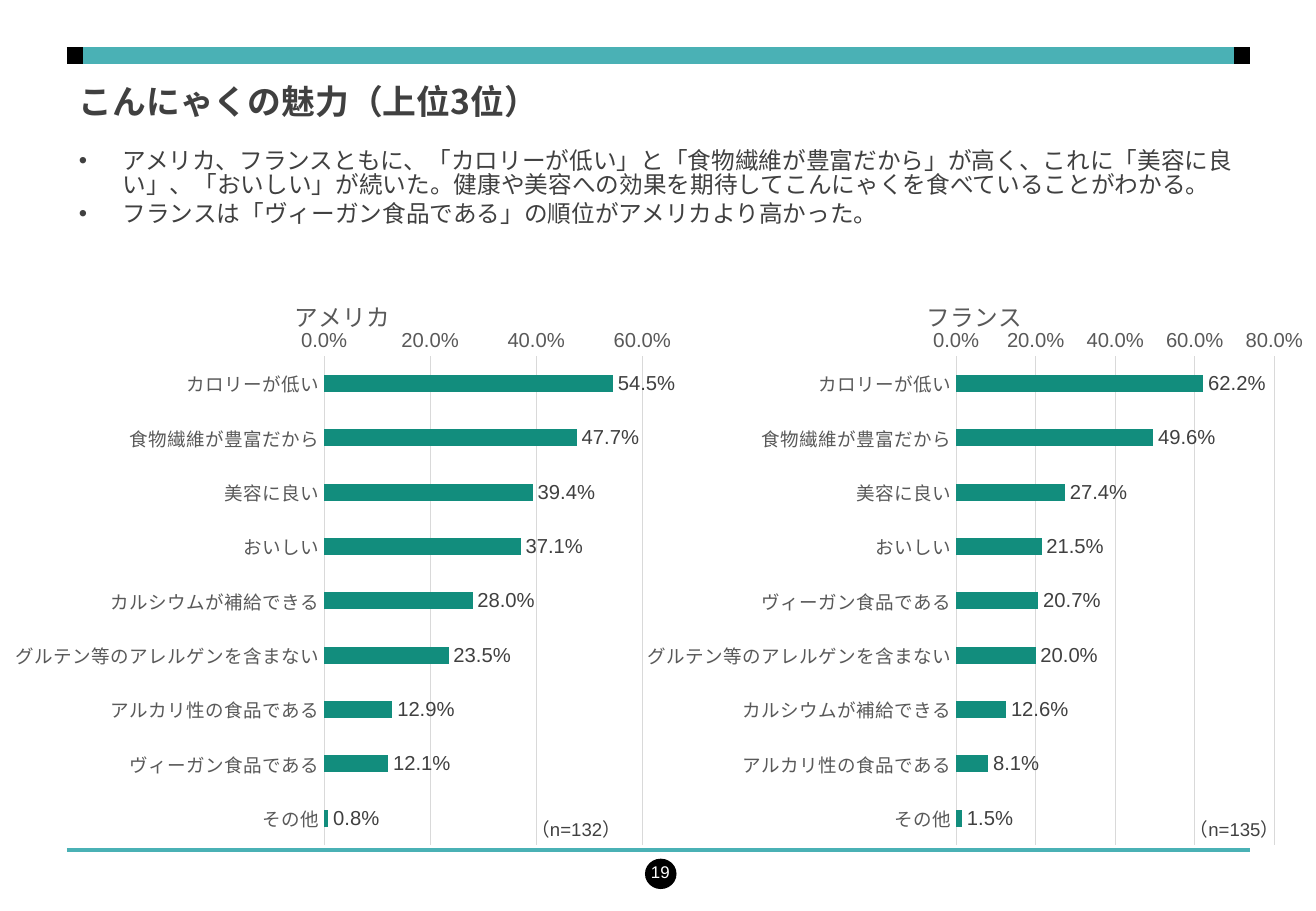
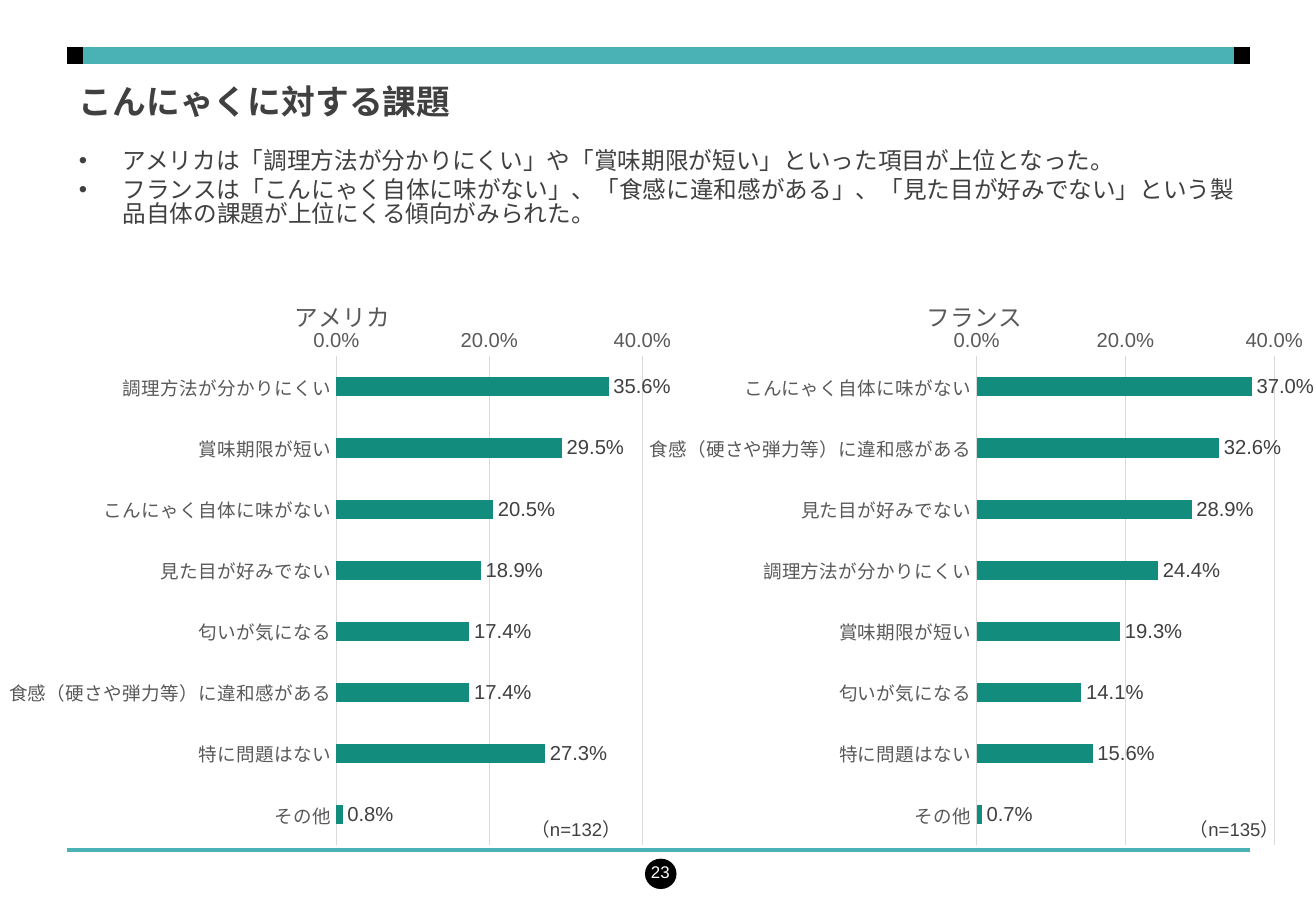
from pptx import Presentation
from pptx.chart.data import CategoryChartData
from pptx.dml.color import RGBColor
from pptx.enum.chart import XL_CHART_TYPE as ChartType, XL_LABEL_POSITION as LabelPos, XL_TICK_MARK as Tick
from pptx.enum.shapes import MSO_CONNECTOR as Connector, MSO_SHAPE as Shape
from pptx.enum.text import MSO_ANCHOR as Anchor, PP_ALIGN as Align
from pptx.oxml import parse_xml
from pptx.oxml.ns import nsdecls, qn
from pptx.util import Pt

WIDTH, HEIGHT = 780, 540
TEAL, GREEN, BLACK, WHITE = "4AB1B5", "128D7D", "000000", "FFFFFF"
INK, GREY, GRID = "404040", "595959", "D9D9D9"
LATIN, JAPANESE = "Arial", "Noto Sans CJK JP"
PERCENT = '0.0"%"'

LEFT, RIGHT = 39.6, 740.9
BAND_Y, RULE_Y, CAP = 33.1, 504, 9.6
TITLE_BOX = (38.9, 48.2, 702, 31)
BULLET_BOX = (38.9, 85.7, 702, 65.5)
CHART_W, CHART_H, CHART_TOP = 405.4, 357, 157
PLOT_TOP, PLOT_H, PLOT_RIGHT = 0.152, 0.812, 0.939

SLIDES = [
    {
        "number": "19",
        "title": "こんにゃくの魅力（上位3位）",
        "bullets": [
            "アメリカ、フランスともに、「カロリーが低い」と「食物繊維が豊富だから」が高く、これに「美容に良い」、「おいしい」が続いた。健康や美容への効果を期待してこんにゃくを食べていることがわかる。",
            "フランスは「ヴィーガン食品である」の順位がアメリカより高かった。",
        ],
        "usa": (60, 0.474, {
            "カロリーが低い": 54.5, "食物繊維が豊富だから": 47.7, "美容に良い": 39.4,
            "おいしい": 37.1, "カルシウムが補給できる": 28.0,
            "グルテン等のアレルゲンを含まない": 23.5, "アルカリ性の食品である": 12.9,
            "ヴィーガン食品である": 12.1, "その他": 0.8,
        }),
        "france": (80, 0.474, {
            "カロリーが低い": 62.2, "食物繊維が豊富だから": 49.6, "美容に良い": 27.4,
            "おいしい": 21.5, "ヴィーガン食品である": 20.7,
            "グルテン等のアレルゲンを含まない": 20.0, "カルシウムが補給できる": 12.6,
            "アルカリ性の食品である": 8.1, "その他": 1.5,
        }),
    },
    {
        "number": "23",
        "title": "こんにゃくに対する課題",
        "bullets": [
            "アメリカは「調理方法が分かりにくい」や「賞味期限が短い」といった項目が上位となった。",
            "フランスは「こんにゃく自体に味がない」、「食感に違和感がある」、「見た目が好みでない」という製品自体の課題が上位にくる傾向がみられた。",
        ],
        "usa": (40, 0.492, {
            "調理方法が分かりにくい": 35.6, "賞味期限が短い": 29.5,
            "こんにゃく自体に味がない": 20.5, "見た目が好みでない": 18.9,
            "匂いが気になる": 17.4, "食感（硬さや弾力等）に違和感がある": 17.4,
            "特に問題はない": 27.3, "その他": 0.8,
        }),
        "france": (40, 0.504, {
            "こんにゃく自体に味がない": 37.0, "食感（硬さや弾力等）に違和感がある": 32.6,
            "見た目が好みでない": 28.9, "調理方法が分かりにくい": 24.4,
            "賞味期限が短い": 19.3, "匂いが気になる": 14.1,
            "特に問題はない": 15.6, "その他": 0.7,
        }),
    },
]


def color(hex_string):
    return RGBColor.from_string(hex_string)


def style_font(font, size, hex_string, name=LATIN, bold=False):
    font.size = Pt(size)
    font.name = name
    font.bold = bold
    font.color.rgb = color(hex_string)


def add_text(page, box, lines, size, hex_string, name=LATIN, bold=False, align=Align.LEFT,
             anchor=Anchor.TOP, side_inset=7.8, spacing=None, bullet=False):
    frame = page.shapes.add_textbox(*map(Pt, box)).text_frame
    frame.word_wrap = True
    frame.vertical_anchor = anchor
    frame.margin_left = frame.margin_right = Pt(side_inset)
    for index, line in enumerate(lines):
        para = frame.add_paragraph() if index else frame.paragraphs[0]
        para.alignment = align
        if spacing:
            para.line_spacing = spacing
        if index:
            para.space_before = Pt(size * 0.2)
        if bullet:
            props = para._p.get_or_add_pPr()
            props.set("marL", str(Pt(26)))
            props.set("indent", str(-Pt(26)))
            props.append(parse_xml(f'<a:buFont {nsdecls("a")} typeface="{LATIN}"/>'))
            props.append(parse_xml(f'<a:buChar {nsdecls("a")} char="•"/>'))
        span = para.add_run()
        span.text = line
        style_font(span.font, size, hex_string, name, bold)
        span._r.get_or_add_rPr().find(qn("a:latin")).addnext(
            parse_xml(f'<a:ea {nsdecls("a")} typeface="{JAPANESE}"/>'))


def add_line(page, x1, x2, y, hex_string, weight):
    line = page.shapes.add_connector(Connector.STRAIGHT, Pt(x1), Pt(y), Pt(x2), Pt(y))
    line.line.color.rgb = color(hex_string)
    line.line.width = Pt(weight)
    line._element.spPr.append(parse_xml(f'<a:effectLst {nsdecls("a")}/>'))


def add_frame(page, number):
    add_line(page, LEFT, RIGHT, BAND_Y, TEAL, 10)
    add_line(page, LEFT, RIGHT, RULE_Y, TEAL, 2.25)
    for x in (LEFT, RIGHT - CAP):
        add_line(page, x, x + CAP, BAND_Y, BLACK, 10)
    badge = page.shapes.add_shape(Shape.OVAL, Pt(382.3), Pt(509), Pt(18.7), Pt(18))
    badge.shadow.inherit = False
    badge.fill.solid()
    badge.fill.fore_color.rgb = color(BLACK)
    badge.line.fill.background()
    add_text(page, (369.4, 502.6, 35.3, 28.8), [number], 10, WHITE,
             align=Align.RIGHT, anchor=Anchor.MIDDLE)


def set_layout(parent, index, target="", **parts):
    for old in parent.findall(qn("c:layout")):
        parent.remove(old)
    values = "".join(f'<c:{key} val="{value:.3f}"/>' for key, value in parts.items())
    inner = f'<c:layoutTarget val="{target}"/>' if target else ""
    parent.insert(index, parse_xml(
        f'<c:layout {nsdecls("c")}><c:manualLayout>{inner}<c:xMode val="edge"/>'
        f'<c:yMode val="edge"/>{values}</c:manualLayout></c:layout>'))


def style_axes(chart, maximum):
    categories, values = chart.category_axis, chart.value_axis
    for axis, size in ((categories, 11), (values, 12)):
        axis.major_tick_mark = axis.minor_tick_mark = Tick.NONE
        style_font(axis.tick_labels.font, size, GREY)
    categories.reverse_order = True
    values.minimum_scale, values.maximum_scale, values.major_unit = 0, maximum, 20
    values.tick_labels.number_format = PERCENT
    values.tick_labels.number_format_is_linked = False
    values.format.line.fill.background()
    values.has_major_gridlines = True
    for line in (categories.format.line, values.major_gridlines.format.line):
        line.color.rgb = color(GRID)
        line.width = Pt(0.75)


def add_bar_chart(page, box, title, maximum, plot_left, answers):
    data = CategoryChartData(number_format=PERCENT)
    data.categories = list(answers)
    data.add_series("Series 1", list(answers.values()))
    chart = page.shapes.add_chart(ChartType.BAR_CLUSTERED, *map(Pt, box), data).chart
    style_font(chart.font, 10, BLACK)
    chart._chartSpace.find(qn("c:chart")).addnext(parse_xml(
        f'<c:spPr {nsdecls("c", "a")}><a:noFill/><a:ln><a:noFill/></a:ln></c:spPr>'))
    chart.has_legend = False
    chart.has_title = True
    chart.chart_title.text_frame.text = title
    style_font(chart.chart_title.text_frame.paragraphs[0].runs[0].font, 14, GREY)
    set_layout(chart.chart_title._element, 1, x=0.425, y=0.045)
    set_layout(chart._chartSpace.chart.plotArea, 0, "inner", x=plot_left, y=PLOT_TOP,
               w=PLOT_RIGHT - plot_left, h=PLOT_H)
    style_axes(chart, maximum)

    plot = chart.plots[0]
    plot.vary_by_categories = False
    plot.gap_width = 219
    fill = plot.series[0].format.fill
    fill.solid()
    fill.fore_color.rgb = color(GREEN)
    plot.has_data_labels = True
    labels = plot.data_labels
    labels.show_value = True
    labels.position = LabelPos.OUTSIDE_END
    labels.number_format = PERCENT
    labels.number_format_is_linked = False
    style_font(labels.font, 12, INK)


def add_survey_page(deck, content):
    page = deck.slides.add_slide(deck.slide_layouts[6])
    add_frame(page, content["number"])
    add_text(page, TITLE_BOX, [content["title"]], 20, INK, JAPANESE, bold=True, spacing=0.85)
    add_text(page, BULLET_BOX, content["bullets"], 14, INK, JAPANESE, spacing=0.85, bullet=True)
    regions = (
        (0, "アメリカ", "usa", "（n=132）", 288.7),
        (WIDTH - CHART_W, "フランス", "france", "（n=135）", 304.3),
    )
    for left, title, key, _, _ in regions:
        add_bar_chart(page, (left, CHART_TOP, CHART_W, CHART_H), title, *content[key])
    for left, _, _, sample, offset in regions:
        add_text(page, (left + offset, CHART_TOP + 324, 86.4, 20.9), [sample], 11, INK,
                 align=Align.RIGHT, side_inset=7.2)


def main():
    deck = Presentation()
    deck.slide_width, deck.slide_height = Pt(WIDTH), Pt(HEIGHT)
    for content in SLIDES:
        add_survey_page(deck, content)
    deck.save("out.pptx")


if __name__ == "__main__":
    main()
